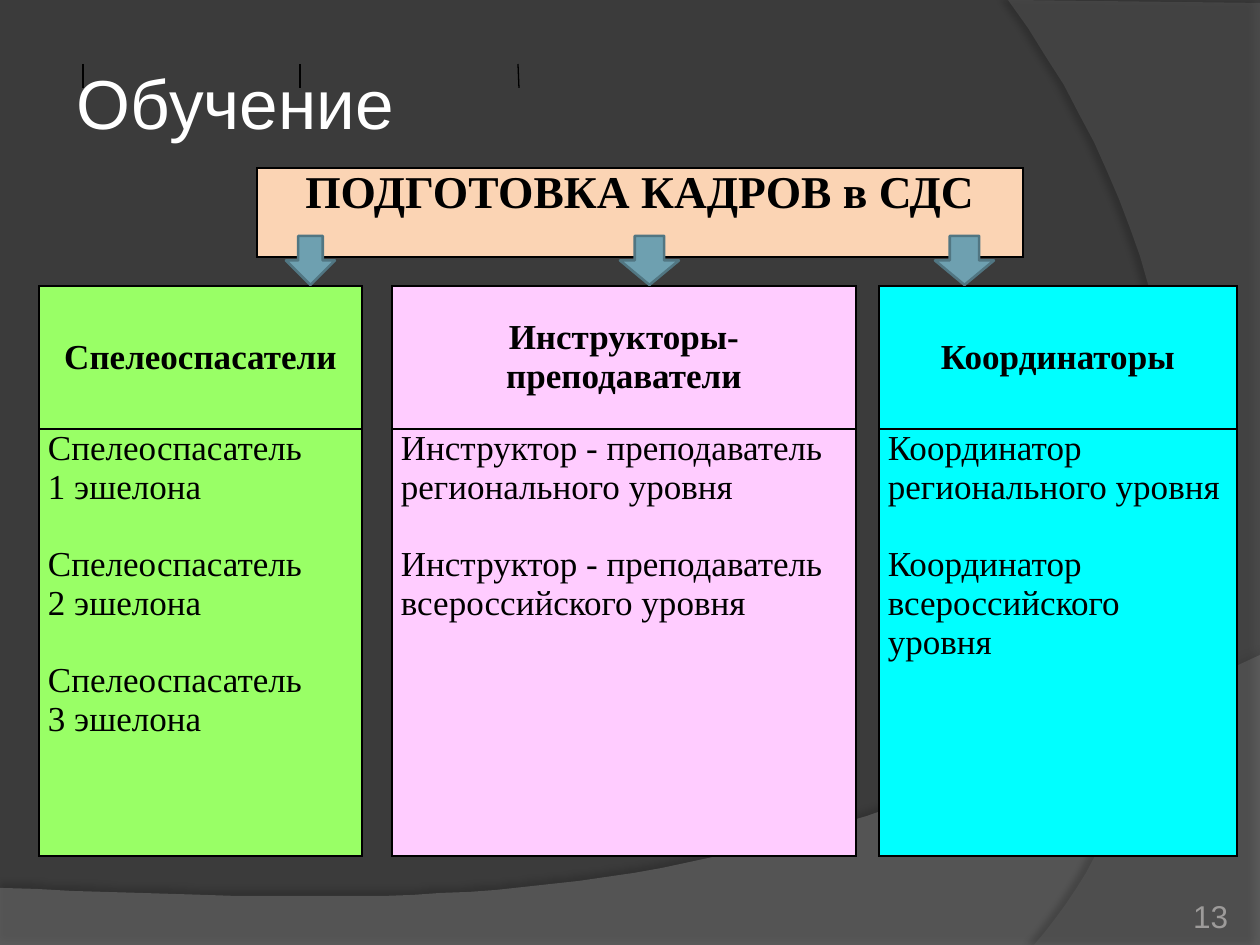
from pptx import Presentation
from pptx.dml.color import RGBColor
from pptx.enum.shapes import MSO_CONNECTOR as Connector, MSO_SHAPE as Shape
from pptx.enum.text import MSO_ANCHOR as Anchor, PP_ALIGN as Align
from pptx.oxml import parse_xml
from pptx.oxml.ns import nsdecls, qn
from pptx.util import Emu, Pt

BACKGROUND = RGBColor(0x3B, 0x3B, 0x3B)
HILL = RGBColor(0x7F, 0x7F, 0x7F)
ARC = RGBColor(0x5E, 0x5E, 0x5E)
WHITE = RGBColor(0xFF, 0xFF, 0xFF)
BLACK = RGBColor(0, 0, 0)
PEACH = RGBColor(0xFB, 0xD4, 0xB4)
GREEN = RGBColor(0x99, 0xFF, 0x66)
PINK = RGBColor(0xFF, 0xCC, 0xFF)
CYAN = RGBColor(0, 0xFF, 0xFF)
TEAL = RGBColor(0x6E, 0xA0, 0xB0)
DARK_TEAL = RGBColor(0x51, 0x76, 0x82)
PAGE_GRAY = RGBColor(0x9D, 0x9B, 0x9A)

PLAIN_TABLE = "{2D5ABB26-0587-4C30-8999-92F81FD0307C}"


def px(length):
    return Emu(round(length * 914400 / 126))


def curve(start, first, second, end, steps=40):
    for step in range(1, steps + 1):
        t = step / steps
        weights = ((1 - t) ** 3, 3 * t * (1 - t) ** 2, 3 * t * t * (1 - t), t ** 3)
        yield tuple(
            round(sum(w * point[axis] for w, point in zip(weights, (start, first, second, end))))
            for axis in (0, 1)
        )


class SlideBuilder:
    sans = "Arial"
    serif = "Times New Roman"

    def __init__(self, slide):
        self.slide = slide
        self.shapes = slide.shapes
        slide.background.fill.solid()
        slide.background.fill.fore_color.rgb = BACKGROUND

    def font(self, paragraph, name, size, color, bold=False):
        font = paragraph.font
        font.name, font.size, font.bold = name, Pt(size), bold
        font.color.rgb = color

    def margins(self, target, left, top, right, bottom):
        target.margin_left, target.margin_top = px(left), px(top)
        target.margin_right, target.margin_bottom = px(right), px(bottom)

    def wave(self, points, color, opacity, shadow_opacity, distance, direction):
        builder = self.shapes.build_freeform(*points[0], scale=914400 / 126)
        builder.add_line_segments(points[1:], close=True)
        wave = builder.convert_to_shape()
        wave.fill.solid()
        wave.fill.fore_color.rgb = color
        wave.line.fill.background()
        wave.shadow.inherit = False
        properties = wave._element.spPr
        fill_color = properties.find(qn("a:solidFill"))[0]
        fill_color.append(parse_xml(f'<a:alpha {nsdecls("a")} val="{opacity * 1000}"/>'))
        properties.find(qn("a:effectLst")).append(parse_xml(
            f'<a:outerShdw {nsdecls("a")} blurRad="{Pt(4)}" dist="{Pt(distance)}" '
            f'dir="{direction * 60000}" rotWithShape="0"><a:srgbClr val="{BLACK}">'
            f'<a:alpha val="{shadow_opacity * 1000}"/></a:srgbClr></a:outerShdw>'))

    def title(self, text, left, top, width, height):
        title = self.shapes.title
        self.shapes._spTree.append(title._element)
        title.left, title.top, title.width, title.height = map(px, (left, top, width, height))
        frame = title.text_frame
        self.margins(frame, 14, 6, 6, 30)
        frame.vertical_anchor = Anchor.MIDDLE
        frame.text = text
        heading = frame.paragraphs[0]
        heading.alignment = Align.LEFT
        self.font(heading, self.sans, 39.6, WHITE)

    def table(self, left, top, columns, rows):
        frame = self.shapes.add_table(
            len(rows), len(columns), px(left), px(top), px(sum(columns)), px(sum(rows)))
        table = frame.table
        table.first_row = table.horz_banding = False
        table._tbl.tblPr.find(qn("a:tableStyleId")).text = PLAIN_TABLE
        for column, width in zip(table.columns, columns):
            column.width = px(width)
        for row, height in zip(table.rows, rows):
            row.height = px(height)
        for cell in table.iter_cells():
            self.margins(cell, 9, 0, 9, 0)
            cell.fill.background()
        return table

    def paint(self, cell, color):
        cell.fill.solid()
        cell.fill.fore_color.rgb = color
        for index, side in enumerate("LRTB"):
            cell._tc.get_or_add_tcPr().insert(index, parse_xml(
                f'<a:ln{side} {nsdecls("a")} w="{Pt(1)}"><a:solidFill>'
                f'<a:srgbClr val="{BLACK}"/></a:solidFill></a:ln{side}>'))

    def cell_text(self, cell, entries, size, bold=False, align=Align.LEFT, anchor=Anchor.TOP):
        cell.vertical_anchor = anchor
        frame = cell.text_frame
        for index, entry in enumerate(entries):
            paragraph = frame.add_paragraph() if index else frame.paragraphs[0]
            paragraph.text = entry
            paragraph.alignment = align
            if index:
                paragraph.space_before = Pt(22)
            self.font(paragraph, self.serif, size, BLACK, bold)

    def tick(self, start_x, end_x, top, bottom):
        tick = self.shapes.add_connector(
            Connector.STRAIGHT, px(start_x), px(top), px(end_x), px(bottom))
        tick.line.color.rgb = BLACK
        tick.line.width = Pt(0.75)
        tick._element.spPr.append(parse_xml(f'<a:effectLst {nsdecls("a")}/>'))

    def down_arrow(self, left, top, width, height):
        arrow = self.shapes.add_shape(
            Shape.DOWN_ARROW, px(left), px(top), px(width), px(height))
        arrow.shadow.inherit = False
        arrow.fill.solid()
        arrow.fill.fore_color.rgb = TEAL
        arrow.line.color.rgb = DARK_TEAL
        arrow.line.width = Pt(1.5)

    def page_number(self, text, left, top, width, height):
        frame = self.shapes.add_textbox(px(left), px(top), px(width), px(height)).text_frame
        frame.word_wrap = True
        frame.vertical_anchor = Anchor.BOTTOM
        self.margins(frame, 0, 0, 0, 0)
        frame.text = text
        number = frame.paragraphs[0]
        number.alignment = Align.RIGHT
        self.font(number, self.sans, 18, PAGE_GRAY)


def main():
    deck = Presentation()
    deck.slide_width, deck.slide_height = px(1260), px(945)
    builder = SlideBuilder(deck.slides.add_slide(deck.slide_layouts[5]))

    hill = [(0, 888), (0, 946), (1260, 946), (1260, 655)]
    hill += curve((1260, 655), (704, 919), (493, 906), (0, 888))
    builder.wave(hill, HILL, 45, 35, 3.5, 270)
    arc = [(1260, 3), (1260, 945), (1034, 945)]
    arc += curve((1034, 945), (1178, 780), (1283, 378), (1008, 0))
    builder.wave(arc, ARC, 40, 45, 4, 180)

    builder.title("Обучение", 63, 49, 1158, 129)

    banner = builder.table(147, 168, [110, 766, 110], [36, 42])
    for row in range(2):
        builder.paint(banner.cell(row, 1), PEACH)
    banner.cell(0, 1).merge(banner.cell(1, 1))
    builder.cell_text(banner.cell(0, 1), ["ПОДГОТОВКА КАДРОВ в СДС"], 26, True, Align.CENTER)

    roles = [
        ("Спелеоспасатели", GREEN,
         [f"Спелеоспасатель\v{echelon} эшелона" for echelon in (1, 2, 3)]),
        ("Инструкторы-преподаватели", PINK,
         [f"Инструктор - преподаватель {level} уровня"
          for level in ("регионального", "всероссийского")]),
        ("Координаторы", CYAN,
         [f"Координатор {level} уровня" for level in ("регионального", "всероссийского")]),
    ]
    staff = builder.table(39, 286, [323, 30, 464, 23, 358, 23], [143, 427])
    for index, (role, color, grades) in enumerate(roles):
        header, body = (staff.cell(row, 2 * index) for row in range(2))
        builder.paint(header, color)
        builder.paint(body, color)
        builder.cell_text(header, [role], 20, True, Align.CENTER, Anchor.MIDDLE)
        builder.cell_text(body, grades, 20)
        staff.cell(0, 2 * index + 1).merge(staff.cell(1, 2 * index + 1))

    for start_x, end_x in ((83, 83), (300, 300), (518, 519)):
        builder.tick(start_x, end_x, 64, 88)
    for left, width in ((620, 59), (286, 49), (935, 59)):
        builder.down_arrow(left, 236, width, 49)
    builder.page_number("13", 1124, 885, 104, 50)

    deck.save("out.pptx")


if __name__ == "__main__":
    main()
